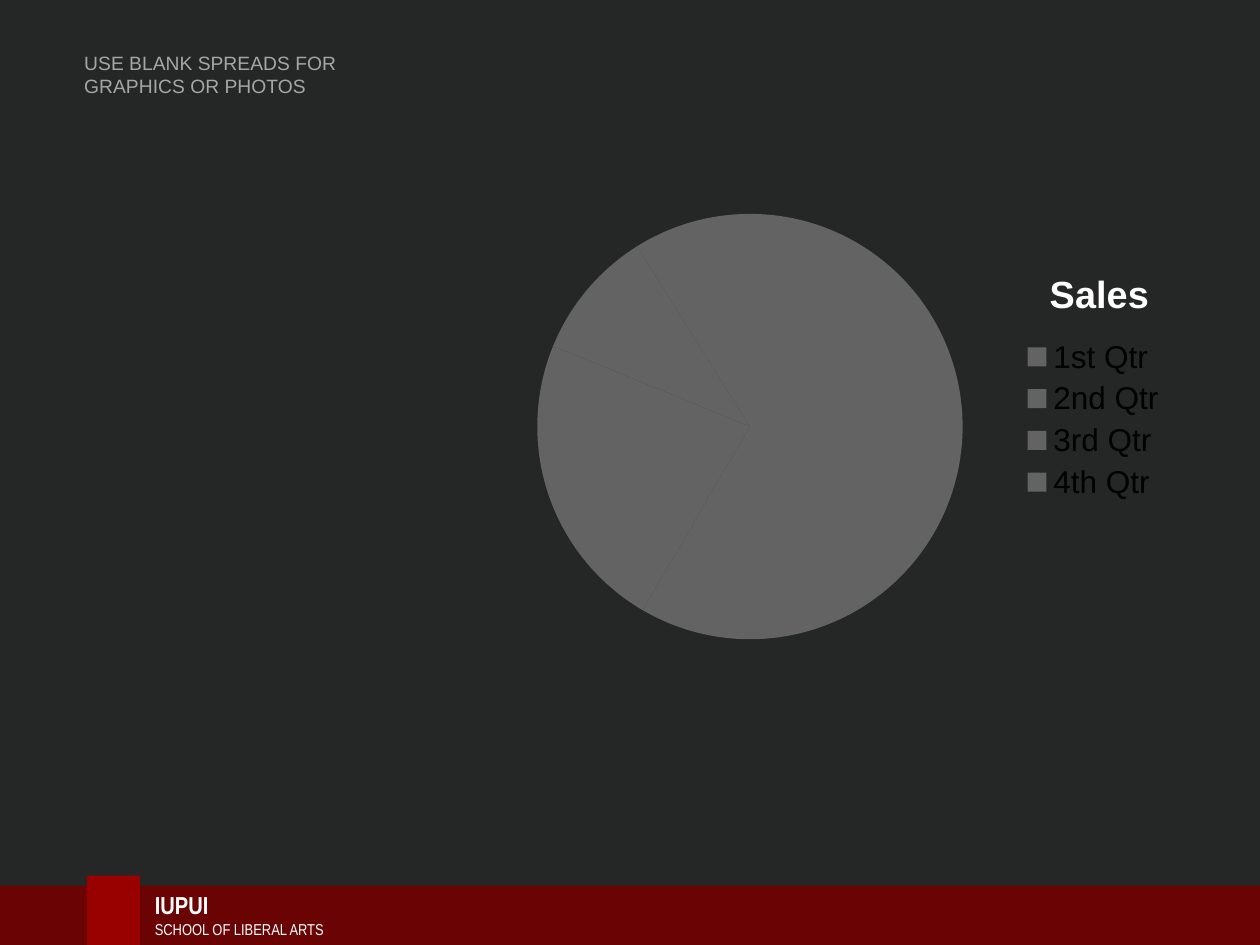
from lxml.etree import SubElement
from pptx import Presentation
from pptx.chart.data import CategoryChartData
from pptx.dml.color import RGBColor
from pptx.enum.chart import XL_CHART_TYPE as ChartType, XL_LEGEND_POSITION as LegendPosition
from pptx.enum.shapes import MSO_SHAPE as Shape
from pptx.enum.text import MSO_ANCHOR as Anchor, MSO_AUTO_SIZE as AutoSize
from pptx.oxml.ns import qn
from pptx.util import Inches, Pt


def color(value):
    return RGBColor.from_string(value)


def add_text(box, lines):
    frame = slide.shapes.add_textbox(*map(Inches, box)).text_frame
    frame.word_wrap = True
    frame.auto_size = AutoSize.SHAPE_TO_FIT_TEXT
    for i, (text, font, size, fill, bold) in enumerate(lines):
        paragraph = frame.add_paragraph() if i else frame.paragraphs[0]
        run = paragraph.add_run()
        run.text = text
        run.font.name = font
        run.font.size = Pt(size)
        run.font.bold = bold
        run.font.color.rgb = color(fill)
    return frame


prs = Presentation()
prs.slide_width, prs.slide_height = Inches(10), Inches(7.5)
slide = prs.slides.add_slide(prs.slide_layouts[6])
slide.background.fill.solid()
slide.background.fill.fore_color.rgb = color("252626")

for box, fill in [((-0.03, 7.03, 10.09, 0.5), "690304"),
                  ((0.69, 6.95, 0.42, 0.58), "990000")]:
    band = slide.shapes.add_shape(Shape.RECTANGLE, *map(Inches, box))
    band.shadow.inherit = False
    band.fill.solid()
    band.fill.fore_color.rgb = color(fill)
    band.line.fill.background()

school = add_text((1.13, 7.01, 3.95, 0.49), [
    ("IUPUI", "Arial Narrow", 14, "FFFFFF", True),
    ("SCHOOL OF LIBERAL ARTS", "Arial Narrow", 9, "FFFFFF", False),
])
school.vertical_anchor = Anchor.MIDDLE

add_text((0.57, 0.36, 2.78, 0.47), [
    ("USE BLANK SPREADS FOR GRAPHICS OR PHOTOS", "Arial", 11, "A6A6A6", False),
])

sales = CategoryChartData()
sales.categories = ["1st Qtr", "2nd Qtr", "3rd Qtr", "4th Qtr"]
sales.add_series("Sales", [59, 23, 10, 9])
pie = slide.shapes.add_chart(
    ChartType.PIE, Inches(2.99), Inches(0.5), Inches(6.37), Inches(5.66), sales).chart
pie.font.name = "Arial"
pie.font.size = Pt(18)
pie.font.color.rgb = color("000000")

pie.has_title = True
heading = pie.chart_title.text_frame.paragraphs[0].add_run()
heading.text = "Sales"
heading.font.name = "Arial"
heading.font.size = Pt(21.6)
heading.font.bold = True
heading.font.color.rgb = color("FFFFFF")

pie.has_legend = True
pie.legend.position = LegendPosition.RIGHT
pie.legend.include_in_layout = False

plot = pie.plots[0]
plot.vary_by_categories = False
for i in range(4):
    quarter = plot.series[0].points[i].format
    quarter.fill.solid()
    quarter.fill.fore_color.rgb = color("636363")
    quarter.line.fill.background()

for parent, index, settings in [
    (pie.chart_title._element, 1, {"xMode": "edge", "yMode": "edge", "x": 0.83, "y": 0.28}),
    (plot._element.getparent(), 0, {"layoutTarget": "inner", "xMode": "edge", "yMode": "edge",
                                    "x": 0.2, "y": 0.11, "w": 0.53, "h": 0.8}),
]:
    layout = parent.find(qn("c:layout"))
    if layout is None:
        layout = SubElement(parent, qn("c:layout"))
        parent.insert(index, layout)
    manual = SubElement(layout, qn("c:manualLayout"))
    for tag, value in settings.items():
        SubElement(manual, qn(f"c:{tag}")).set("val", str(value))

prs.save("out.pptx")
